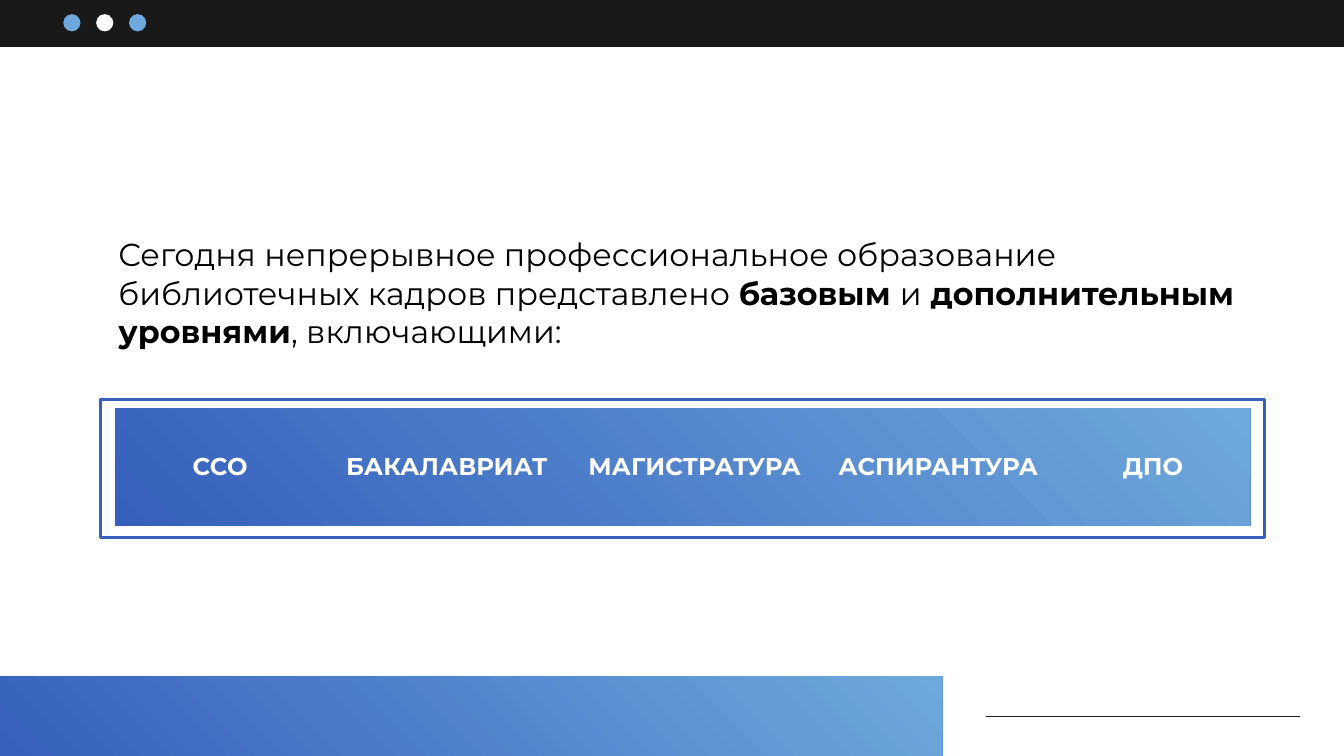
from dataclasses import dataclass

import pptx
import pptx.dml.color
import pptx.enum.shapes
import pptx.enum.text
import pptx.oxml.ns
import pptx.util
from lxml import etree

Pt = pptx.util.Pt
RGBColor = pptx.dml.color.RGBColor
SHAPES = pptx.enum.shapes.MSO_SHAPE
ALIGN = pptx.enum.text.PP_ALIGN
MIDDLE = pptx.enum.text.MSO_ANCHOR.MIDDLE

BLACK = RGBColor(0x00, 0x00, 0x00)
DARK = RGBColor(0x19, 0x19, 0x19)
WHITE = RGBColor(0xFF, 0xFF, 0xFF)
BLUE = RGBColor(0x36, 0x60, 0xBC)
SKY = RGBColor(0x6F, 0xA8, 0xDC)

FONT = "Montserrat"
INSET = Pt(7.2)
NO_GRID_STYLE = "{2D5ABB26-0587-4C30-8999-92F81FD0307C}"


@dataclass(frozen=True)
class Box:
    """A rectangle in points."""
    left: float
    top: float
    width: float
    height: float

    def lengths(self) -> tuple:
        return Pt(self.left), Pt(self.top), Pt(self.width), Pt(self.height)


@dataclass(frozen=True)
class Level:
    """One level of education and the width of its column in points."""
    name: str
    width: float


@dataclass(frozen=True)
class Phrase:
    text: str
    bold: bool = False


TOP_BAR = Box(0, -0.7, 720, 25.9)
FOOTER_BAR = Box(0, 362.4, 504.7, 42.6)
LEVELS_BAR = Box(61.7, 218.7, 608, 62.9)
FRAME = Box(53.8, 213.9, 623.8, 74.2)
TITLE = Box(56.2, 133.9, 635.8, 45.4)

LEVELS = [
    Level("ССО", 112.4),
    Level("БАКАЛАВРИАТ", 130.5),
    Level("МАГИСТРАТУРА", 134.9),
    Level("АСПИРАНТУРА", 126.2),
    Level("ДПО", 104),
]

TITLE_PHRASES = [
    Phrase("Сегодня непрерывное профессиональное образование "
           "библиотечных кадров представлено "),
    Phrase("базовым ", bold=True),
    Phrase("и"),
    Phrase(" дополнительным уровнями", bold=True),
    Phrase(", включающими:"),
]


def format_font(font, size: float, color: RGBColor, bold: bool) -> None:
    font.name = FONT
    font.size = Pt(size)
    font.bold = bold
    font.color.rgb = color


def add_plain_shape(slide, kind, box: Box):
    shape = slide.shapes.add_shape(kind, *box.lengths())
    shape.shadow.inherit = False
    shape.line.fill.background()
    return shape


def add_solid(slide, kind, box: Box, color: RGBColor) -> None:
    shape = add_plain_shape(slide, kind, box)
    shape.fill.solid()
    shape.fill.fore_color.rgb = color


def add_gradient_bar(slide, box: Box) -> None:
    bar = add_plain_shape(slide, SHAPES.RECTANGLE, box)
    bar.fill.gradient()
    bar.fill.gradient_angle = 45
    for stop, color in zip(bar.fill.gradient_stops, (BLUE, SKY)):
        stop.color.rgb = color


def add_frame(slide, box: Box) -> None:
    frame = add_plain_shape(slide, SHAPES.RECTANGLE, box)
    frame.fill.background()
    frame.line.color.rgb = BLUE
    frame.line.width = Pt(1.5)


def add_rule(slide, left: float, right: float, y: float) -> None:
    rule = slide.shapes.add_connector(
        pptx.enum.shapes.MSO_CONNECTOR.STRAIGHT, Pt(left), Pt(y), Pt(right), Pt(y))
    rule.line.color.rgb = DARK
    rule.line.width = Pt(0.75)
    etree.SubElement(rule._element.spPr, pptx.oxml.ns.qn("a:effectLst"))


def add_levels_table(slide, box: Box, levels: list[Level]) -> None:
    table = slide.shapes.add_table(1, len(levels), *box.lengths()).table
    table.first_row = False
    table.horz_banding = False
    style = table._tbl.tblPr.find(pptx.oxml.ns.qn("a:tableStyleId"))
    style.text = NO_GRID_STYLE
    for column, cell, level in zip(table.columns, table.rows[0].cells, levels):
        column.width = Pt(level.width)
        cell.fill.background()
        cell.vertical_anchor = MIDDLE
        cell.margin_left = cell.margin_right = INSET
        cell.margin_top = cell.margin_bottom = INSET
        cell.text_frame.text = level.name
        paragraph = cell.text_frame.paragraphs[0]
        paragraph.alignment = ALIGN.CENTER
        format_font(paragraph.runs[0].font, 13, WHITE, bold=True)


def fill_title(title, box: Box, phrases: list[Phrase]) -> None:
    title.left, title.top, title.width, title.height = box.lengths()
    text_frame = title.text_frame
    text_frame.word_wrap = True
    text_frame.auto_size = pptx.enum.text.MSO_AUTO_SIZE.NONE
    text_frame.vertical_anchor = MIDDLE
    text_frame.margin_left = text_frame.margin_right = INSET
    text_frame.margin_top = text_frame.margin_bottom = INSET
    paragraph = text_frame.paragraphs[0]
    paragraph.alignment = ALIGN.LEFT
    for phrase in phrases:
        run = paragraph.add_run()
        run.text = phrase.text
        format_font(run.font, 17, BLACK, phrase.bold)


def main() -> None:
    presentation = pptx.Presentation()
    presentation.slide_width = Pt(720)
    presentation.slide_height = Pt(405)
    slide = presentation.slides.add_slide(presentation.slide_layouts[5])

    # Top bar with three dots, footer bar and rule
    add_solid(slide, SHAPES.RECTANGLE, TOP_BAR, DARK)
    for index, color in enumerate((SKY, WHITE, SKY)):
        dot = Box(33.9 + 17.6 * index, 7.6, 9.2, 9.2)
        add_solid(slide, SHAPES.OVAL, dot, color)
    add_gradient_bar(slide, FOOTER_BAR)
    add_rule(slide, 528, 696.4, 383.8)

    # Title
    fill_title(slide.shapes.title, TITLE, TITLE_PHRASES)

    # Levels of education on a framed gradient bar
    add_gradient_bar(slide, LEVELS_BAR)
    add_levels_table(slide, LEVELS_BAR, LEVELS)
    add_frame(slide, FRAME)

    presentation.save("out.pptx")


if __name__ == "__main__":
    main()
